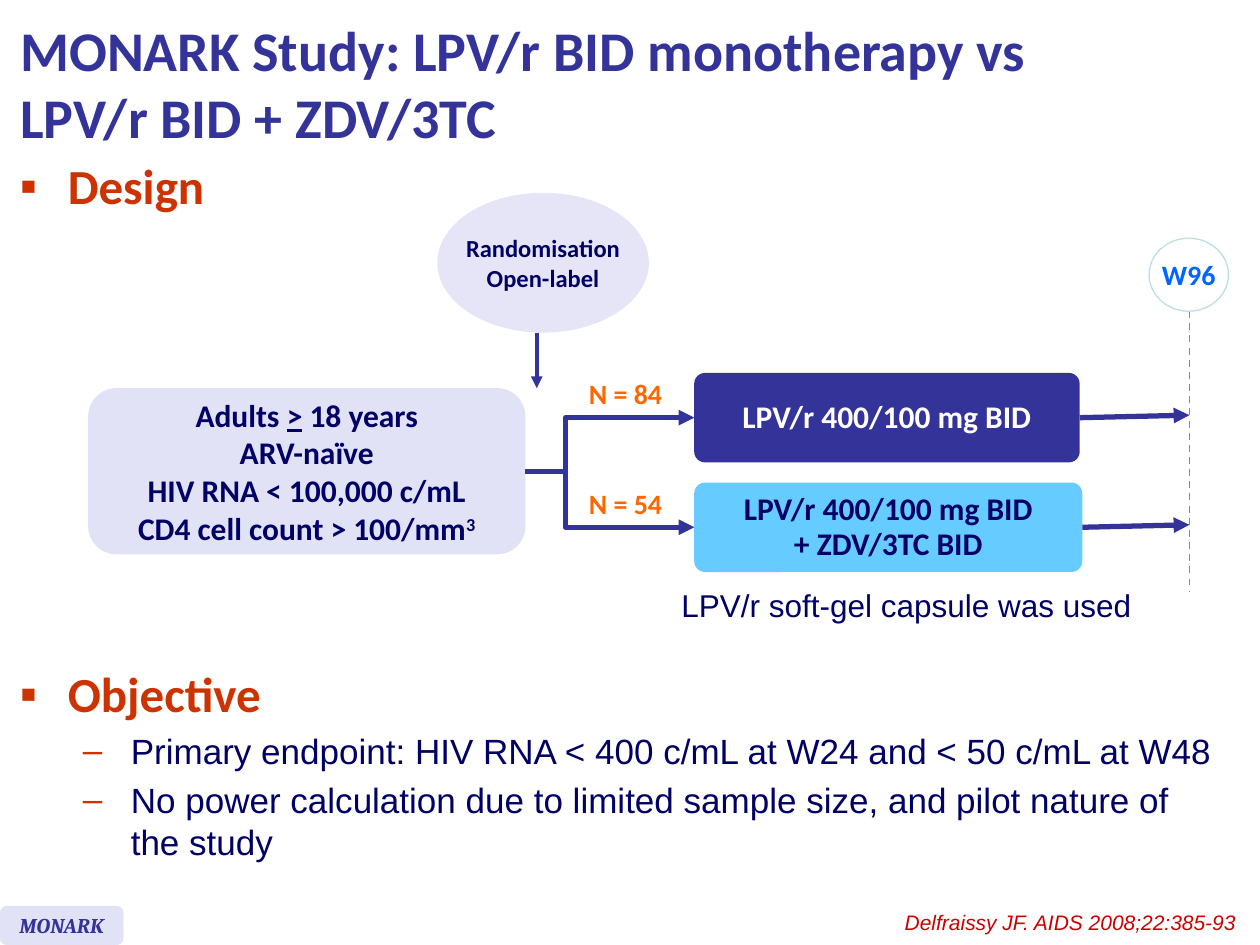
from collections import namedtuple

from lxml import etree
from pptx import Presentation, util as u
from pptx.dml.color import RGBColor
from pptx.enum import dml, shapes, text
from pptx.oxml.ns import qn

COLORS = {"indigo": "333399", "navy": "000066", "red": "CC3300", "crimson": "CC0000",
          "lilac": "E2E2F6", "mist": "E5E5F7", "sky": "66CCFF", "orange": "FF6600",
          "blue": "0066FF", "teal": "BBE0E3", "violet": "7E7ED4", "white": "FFFFFF"}
COLS, ROWS = 100, 75
SLIDE_W, SLIDE_H = u.Inches(10), u.Inches(7.5)
CENTER = text.PP_ALIGN.CENTER
MIDDLE = text.MSO_ANCHOR.MIDDLE


class Box(namedtuple("Box", "col row cols rows")):
    """Area of the slide grid, in columns and rows."""

    def area(self, col, row, cols=0, rows=0):
        """Return an area placed from this area's corner."""
        return Box(self.col + col, self.row + row, cols, rows)

    def emu(self):
        """Return left, top, width and height in EMU."""
        x, y = SLIDE_W / COLS, SLIDE_H / ROWS
        return [round(n) for n in (self.col * x, self.row * y, self.cols * x, self.rows * y)]


def rgb(name):
    """Look up a colour."""
    return RGBColor.from_string(COLORS[name])


def add_bullet(paragraph, sign, left):
    """Give a paragraph a hanging red bullet, with its text at left inches."""
    props = paragraph._p.get_or_add_pPr()
    props.set("marL", str(u.Inches(left)))
    props.set("indent", str(u.Inches(-0.38)))
    color = etree.SubElement(props, qn("a:buClr"))
    etree.SubElement(color, qn("a:srgbClr")).set("val", COLORS["red"])
    etree.SubElement(props, qn("a:buFont")).set("typeface", "Arial")
    etree.SubElement(props, qn("a:buChar")).set("char", sign)


def write(frame, lines, size=18, font="Calibri", color="navy", bold=True, italic=False,
          align=None, anchor=None, wrap=False, spacing=None, before=0, bullet=None, more=False):
    """Write lines, each a string or a list of (string, mark) runs, in one format."""
    frame.word_wrap = wrap
    frame.auto_size = text.MSO_AUTO_SIZE.NONE
    if anchor is not None:
        frame.vertical_anchor = anchor
    for index, line in enumerate(lines):
        paragraph = frame.add_paragraph() if index or more else frame.paragraphs[0]
        if bullet:
            add_bullet(paragraph, *bullet)
        paragraph.alignment = align
        if spacing:
            paragraph.line_spacing = spacing
        if before:
            paragraph.space_before = u.Pt(before)
        for words, mark in [(line, None)] if isinstance(line, str) else line:
            run = paragraph.add_run()
            run.text = words
            run.font.name, run.font.size = font, u.Pt(size)
            run.font.bold, run.font.italic = bold, italic
            run.font.color.rgb = rgb(color)
            if mark == "underline":
                run.font.underline = True
            if mark == "super":
                run._r.get_or_add_rPr().set("baseline", "30000")


def add_label(slide, box, lines, **style):
    """Add a text box."""
    write(slide.shapes.add_textbox(*box.emu()).text_frame, lines, **style)


def add_panel(slide, kind, box, fill, lines, outline=None, corner=None, **style):
    """Add a filled shape with centred text."""
    panel = slide.shapes.add_shape(kind, *box.emu())
    panel.shadow.inherit = False
    panel.fill.solid()
    panel.fill.fore_color.rgb = rgb(fill)
    if outline:
        panel.line.color.rgb, panel.line.width = rgb(outline), u.Pt(0.75)
    else:
        panel.line.fill.background()
    if corner:
        panel.adjustments[0] = corner
    write(panel.text_frame, lines, align=CENTER, anchor=MIDDLE, **style)
    return panel


def style_line(line, width=3, color="indigo", ends=()):
    """Set a line's stroke and its arrowheads."""
    line.color.rgb, line.width = rgb(color), u.Pt(width)
    for end in ends:
        etree.SubElement(line._get_or_add_ln(), qn(f"a:{end}")).set("type", "triangle")


def add_line(slide, start, end, source=None, **style):
    """Add a straight line, joined to the right side of its source if given."""
    points = start.emu()[:2] + end.emu()[:2]
    link = slide.shapes.add_connector(shapes.MSO_CONNECTOR.STRAIGHT, *points)
    if source is not None:
        link.begin_connect(source, 3)
    style_line(link.line, **style)
    etree.SubElement(link._element.spPr, qn("a:effectLst"))
    return link


def add_title(slide, box):
    """Place the slide title."""
    title = slide.shapes.title
    title.left, title.top, title.width, title.height = box.emu()
    write(title.text_frame, ["MONARK Study: LPV/r BID monotherapy vs LPV/r BID + ZDV/3TC"],
          size=32, color="indigo", align=text.PP_ALIGN.LEFT, anchor=MIDDLE, wrap=True, spacing=1.0)


def add_population(slide, box):
    """Draw the randomisation bubble and the patients who enter the study."""
    rounded, oval = shapes.MSO_SHAPE.ROUNDED_RECTANGLE, shapes.MSO_SHAPE.OVAL
    criteria = [[("Adults ", None), (">", "underline"), (" 18 years", None)], "ARV-naïve",
                "HIV RNA < 100,000 c/mL", [("CD4 cell count > 100/mm", None), ("3", "super")]]
    patients = add_panel(slide, rounded, box.area(0, 15.5, 34.7, 13.2), "lilac", criteria,
                         corner=0.17)
    add_panel(slide, oval, box.area(27.7, 0, 16.8, 11.1), "mist",
              ["Randomisation", "Open-label"], size=14)
    add_line(slide, box.area(35.6, 11.1), box.area(35.6, 15.5), width=2.25, ends=["tailEnd"])
    add_line(slide, box.area(34.7, 22.1), box.area(37.8, 22.1), source=patients)


def add_arms(slide, box):
    """Draw the two treatment arms, their sizes, the fork and the final visit."""
    arms = [("N = 84", ["LPV/r 400/100 mg BID"], "indigo", "white", 30.6),
            ("N = 54", ["LPV/r 400/100 mg BID", "+ ZDV/3TC BID"], "sky", "navy", 30.8)]
    pitch, height, left = 8.7, 7.1, 10.2
    middles = [10.7 + pitch * n + height / 2 for n in range(len(arms))]

    corners = [box.area(col, row).emu()[:2]
               for col, row in zip((left, 0, 0, left), (middles[0], *middles, middles[1]))]
    outline = slide.shapes.build_freeform(*corners[0])
    outline.add_line_segments(corners[1:], close=False)
    fork = outline.convert_to_shape()
    fork.shadow.inherit = False
    fork.fill.background()
    style_line(fork.line, ends=["headEnd", "tailEnd"])

    add_line(slide, box.area(49.5, 5.8), box.area(49.5, 28.1), width=1,
             color="violet").line.dash_style = dml.MSO_LINE.DASH
    for (count, drugs, fill, color, width), middle in zip(arms, middles):
        add_label(slide, box.area(0.8, middle - 3.75, 7.9, 3.7), [count], size=16,
                  color="orange", align=CENTER)
        arm = add_panel(slide, shapes.MSO_SHAPE.ROUNDED_RECTANGLE,
                        box.area(left, middle - height / 2, width, height), fill, drugs,
                        color=color, corner=0.12, spacing=0.95)
        add_line(slide, box.area(left + width, middle), box.area(49.5, middle - 0.2),
                 source=arm, ends=["tailEnd"])
    add_panel(slide, shapes.MSO_SHAPE.OVAL, box.area(46.3, 0, 6.3, 5.8), "white", ["W96"],
              outline="teal", size=16, color="blue")
    add_label(slide, box.area(8.2, 27.1, 38.1, 4), ["LPV/r soft-gel capsule was used"],
              font="Arial", bold=False)


def add_section(slide, box, heading, points=(), spacing=None):
    """Add a bulleted heading with its points."""
    frame = slide.shapes.add_textbox(*box.emu()).text_frame
    write(frame, [heading], size=28, color="red", wrap=True, spacing=spacing, bullet=("▪", 0.38))
    write(frame, points, size=20, font="Arial", bold=False, wrap=True, before=4,
          bullet=("–", 0.88), more=True)


def add_footer(slide, box):
    """Add the study tag and the reference."""
    add_panel(slide, shapes.MSO_SHAPE.ROUNDED_RECTANGLE, box.area(0, 0.2, 9.8, 3.1), "lilac",
              ["MONARK"], corner=0.17, size=12, font="Cambria", color="indigo", italic=True)
    add_label(slide, box.area(70.6, 0, 28.5, 3), ["Delfraissy JF. AIDS 2008;22:385-93"],
              size=12, font="Arial", color="crimson", bold=False, italic=True,
              align=text.PP_ALIGN.RIGHT)


def main():
    """Build the study design slide."""
    deck = Presentation()
    deck.slide_width, deck.slide_height = SLIDE_W, SLIDE_H
    slide = deck.slides.add_slide(deck.slide_layouts[5])
    add_title(slide, Box(0.6, 0.5, 89.6, 12.1))
    add_section(slide, Box(0.6, 12.4, 18.7, 5.6), "Design", spacing=0.9)
    add_population(slide, Box(7, 15.3, 44.5, 28.7))
    add_arms(slide, Box(44.9, 18.9, 52.6, 31.1))
    add_section(slide, Box(0.6, 52.2, 97.2, 17.7), "Objective",
                ["Primary endpoint: HIV RNA < 400 c/mL at W24 and < 50 c/mL at W48",
                 "No power calculation due to limited sample size, and pilot nature of the study"])
    add_footer(slide, Box(0, 71.7, 100, 3.3))
    deck.save("out.pptx")


if __name__ == "__main__":
    main()
